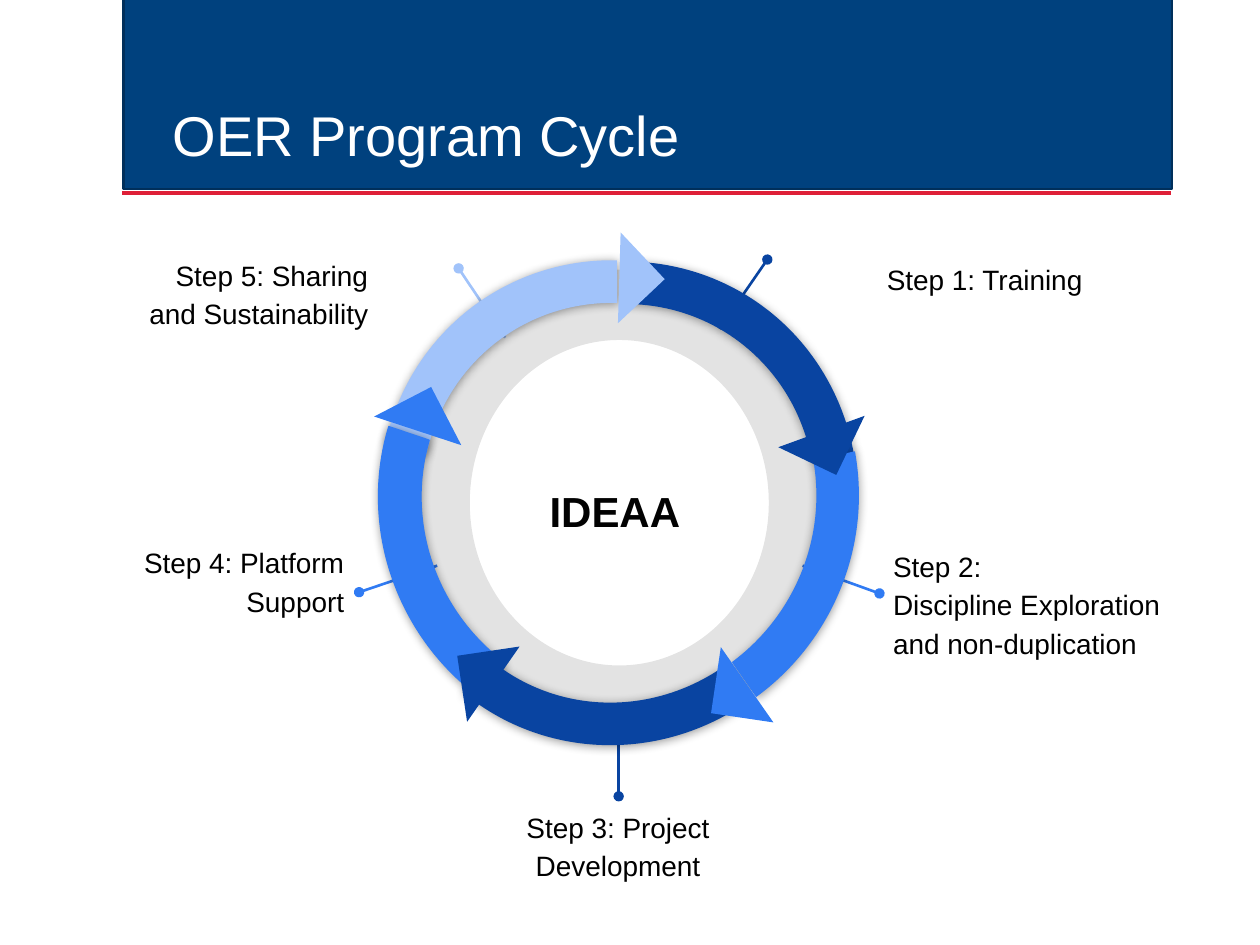
from typing import NamedTuple

from lxml.etree import SubElement
from pptx import Presentation
from pptx.dml.color import RGBColor
from pptx.enum.shapes import MSO_CONNECTOR, MSO_SHAPE
from pptx.enum.text import MSO_ANCHOR, PP_ALIGN
from pptx.oxml.ns import qn
from pptx.util import Inches, Pt


class Theme:
    font = "Arial"
    head, body, core = 32, 16, 24
    band, edge, rule = "00417E", "002F5B", "DE1F37"
    navy, blue, pale = "0944A1", "307BF3", "A1C3FA"
    white, black, ink = "FFFFFF", "000000", "020202"


class Box(NamedTuple):
    x: float
    y: float
    w: float
    h: float


class Step(NamedTuple):
    text: str
    box: Box
    align: PP_ALIGN
    dot: tuple[float, float]
    end: tuple[float, float]
    color: str


class Arc(NamedTuple):
    box: Box
    turn: float
    flip: bool
    adj: tuple[float, float, float]
    color: str
    edge: bool = False


class Tip(NamedTuple):
    box: Box
    turn: float
    color: str


LEFT, MID, RIGHT = PP_ALIGN.LEFT, PP_ALIGN.CENTER, PP_ALIGN.RIGHT

STEPS = [
    Step("Step 1: Training", Box(6.94, 1.94, 2.05, 0.98), LEFT,
         (6.09, 2.06), (5.71, 2.61), Theme.navy),
    Step("Step 5: Sharing and Sustainability", Box(0.97, 1.91, 2.05, 0.98), RIGHT,
         (3.64, 2.13), (4.01, 2.68), Theme.pale),
    Step("Step 2:\nDiscipline Exploration and non-duplication",
         Box(6.99, 4.22, 2.57, 1.76), LEFT,
         (6.98, 4.71), (6.37, 4.49), Theme.blue),
    Step("Step 4: Platform Support", Box(0.78, 4.19, 2.05, 0.98), RIGHT,
         (2.85, 4.7), (3.47, 4.49), Theme.blue),
    Step("Step 3: Project Development", Box(3.88, 6.29, 2.05, 0.98), MID,
         (4.91, 6.32), (4.91, 5.61), Theme.navy),
]

# Arcs and arrow tips, from back to front
RING = [
    Arc(Box(3.04, 2.06, 3.75, 3.87), 31.5, False, (144.14, 189.99, 0.09), Theme.navy),
    Arc(Box(3.05, 2.05, 3.75, 3.87), 211.5, True, (201.79, 26.24, 0.09), Theme.blue),
    Tip(Box(6.26, 3.17, 0.52, 0.51), 295.6, Theme.navy),
    Arc(Box(3.03, 2.05, 3.76, 3.88), 328.5, True, (143.34, 188.55, 0.09), Theme.pale),
    Arc(Box(3.02, 2.06, 3.75, 3.87), 148.5, False, (201.85, 30.07, 0.09),
        Theme.blue, True),
    Arc(Box(3.02, 2.06, 3.75, 3.87), 211.5, True, (157.39, 200.08, 0.09), Theme.navy),
    Tip(Box(3.06, 3.16, 0.51, 0.52), 152.6, Theme.blue),
    Tip(Box(5.68, 5.17, 0.5, 0.53), 8.4, Theme.blue),
    Tip(Box(3.65, 5.18, 0.53, 0.5), 81.5, Theme.navy),
    Tip(Box(4.66, 1.95, 0.51, 0.51), 226.7, Theme.pale),
]


def rgb(color: str) -> RGBColor:
    return RGBColor.from_string(color)


def add_shape(slide, kind: MSO_SHAPE, box: Box, color: str, turn: float = 0):
    shape = slide.shapes.add_shape(kind, *map(Inches, box))
    shape.fill.solid()
    shape.fill.fore_color.rgb = rgb(color)
    shape.line.fill.background()
    shape.shadow.inherit = False
    shape.rotation = turn
    return shape


def set_line(shape, color: str, width: float) -> None:
    shape.line.color.rgb = rgb(color)
    shape.line.width = Pt(width)


def add_line(slide, start, end, color: str, width: float, dot: bool = False) -> None:
    line = slide.shapes.add_connector(
        MSO_CONNECTOR.STRAIGHT, *map(Inches, (*start, *end)))
    set_line(line, color, width)
    if dot:
        SubElement(line.line._get_or_add_ln(), qn("a:headEnd"), type="oval")
    SubElement(line._element.spPr, qn("a:effectLst"))


def add_text(slide, text: str, box: Box, size: int, color: str,
             align: PP_ALIGN = LEFT, space: float = 1.15, top: float = 0.1,
             bold: bool = False, anchor: MSO_ANCHOR = MSO_ANCHOR.TOP) -> None:
    frame = slide.shapes.add_textbox(*map(Inches, box)).text_frame
    frame.word_wrap = True
    frame.vertical_anchor = anchor
    frame.margin_left = frame.margin_right = frame.margin_bottom = Inches(0.1)
    frame.margin_top = Inches(top)
    frame.text = text
    for para in frame.paragraphs:
        para.alignment = align
        para.line_spacing = space
        para.font.name = Theme.font
        para.font.size = Pt(size)
        para.font.bold = bold
        para.font.color.rgb = rgb(color)


def set_alpha(node, percent: int) -> None:
    SubElement(node, qn("a:alpha"), val=str(percent * 1000))


def add_arc(slide, arc: Arc) -> None:
    shape = add_shape(slide, MSO_SHAPE.BLOCK_ARC, arc.box, arc.color, arc.turn)
    for i, value in enumerate(arc.adj):
        shape.adjustments[i] = value
    props = shape._element.spPr
    if arc.flip:
        props.find(qn("a:xfrm")).set("flipH", "1")
    if arc.edge:
        set_line(shape, arc.color, 0.75)
    # Soft shadow just below the arc
    glow = SubElement(props.find(qn("a:effectLst")), qn("a:outerShdw"),
                      blurRad=str(Pt(5.6)), dist=str(Pt(0.8)),
                      dir=str(90 * 60000), rotWithShape="0")
    set_alpha(SubElement(glow, qn("a:srgbClr"), val=Theme.black), 40)


def main() -> None:
    deck = Presentation()
    deck.slide_width, deck.slide_height = Inches(10), Inches(7.5)
    slide = deck.slides.add_slide(deck.slide_layouts[6])

    # Title band
    band = add_shape(slide, MSO_SHAPE.RECTANGLE, Box(0.98, -0.02, 8.32, 1.52), Theme.band)
    set_line(band, Theme.edge, 1.25)
    add_line(slide, (0.97, 1.53), (9.29, 1.53), Theme.rule, 2.5)
    add_text(slide, "OER Program Cycle", Box(1.27, 0.65, 5.41, 0.61),
             Theme.head, Theme.white, space=1, top=0.15)

    # Step labels and pointers
    for step in STEPS:
        add_line(slide, step.dot, step.end, step.color, 1.5, dot=True)
        add_text(slide, step.text, step.box, Theme.body, Theme.black, step.align)

    # Centre
    add_text(slide, "IDEAA ", Box(3.93, 3.44, 1.98, 1.17), Theme.core, Theme.ink,
             MID, bold=True, anchor=MSO_ANCHOR.MIDDLE)
    disc = add_shape(slide, MSO_SHAPE.DONUT, Box(3.17, 2.14, 3.49, 3.7), Theme.black)
    disc.adjustments[0] = 0.16
    set_alpha(disc._element.spPr.find(f"{qn('a:solidFill')}/{qn('a:srgbClr')}"), 11)

    # Ring of arrows
    for part in RING:
        if isinstance(part, Arc):
            add_arc(slide, part)
        else:
            add_shape(slide, MSO_SHAPE.RIGHT_TRIANGLE, part.box, part.color, part.turn)

    deck.save("out.pptx")


if __name__ == "__main__":
    main()
